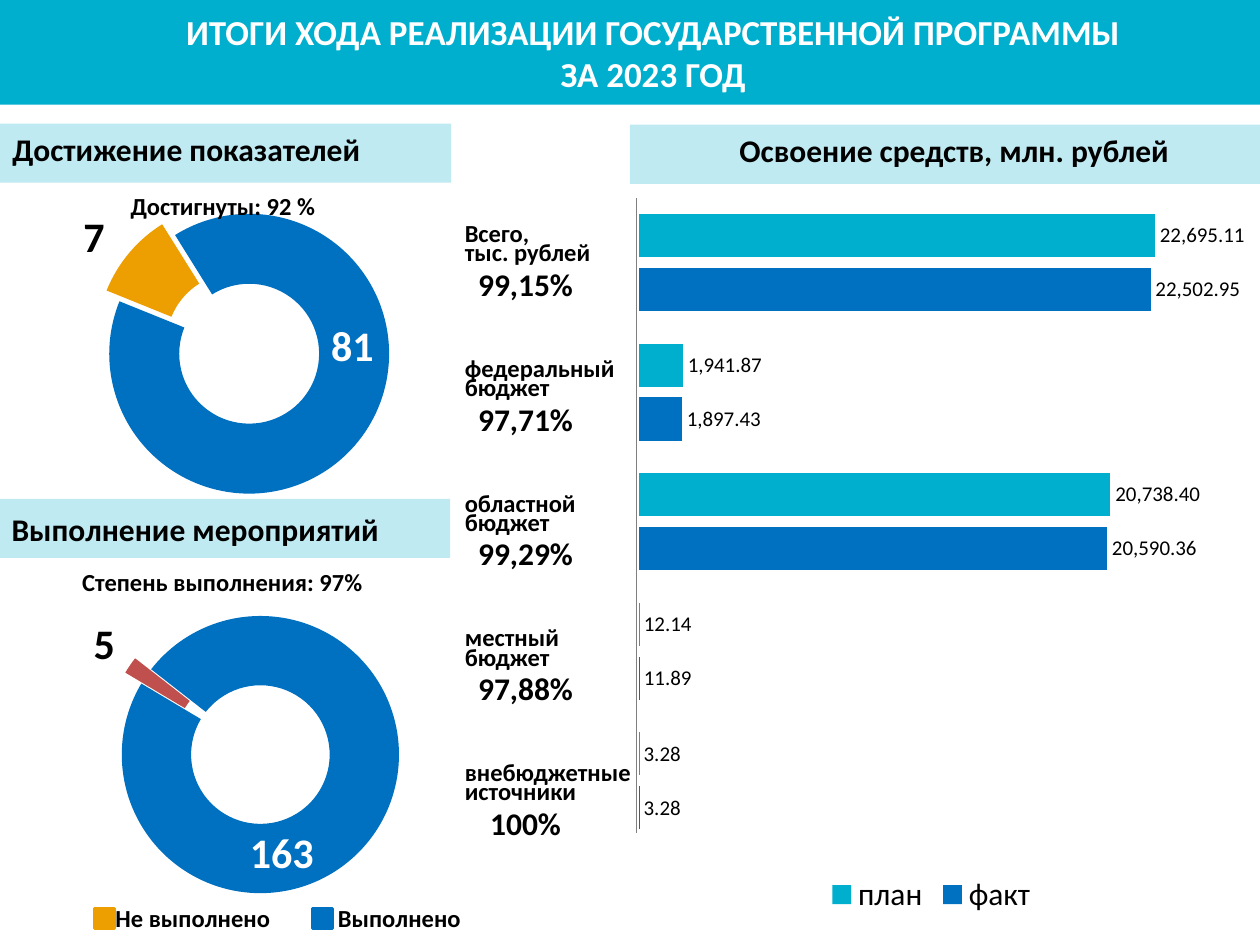
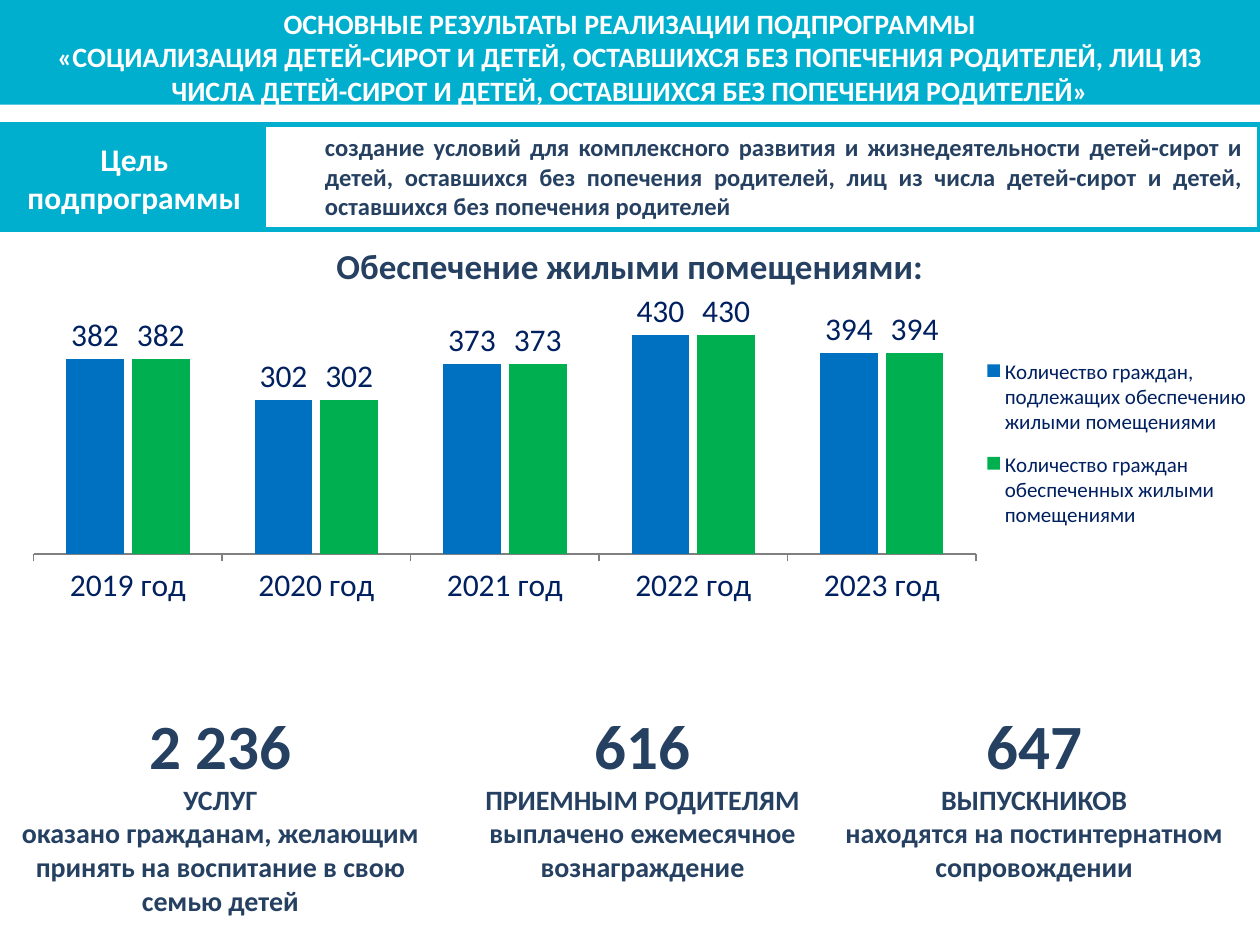
from dataclasses import dataclass

import pptx
import pptx.chart.data
import pptx.dml.color
import pptx.enum.chart
import pptx.enum.shapes
import pptx.enum.text
import pptx.oxml
import pptx.oxml.ns
import pptx.util
from lxml import etree

Pt = pptx.util.Pt
qn = pptx.oxml.ns.qn
ALIGN = pptx.enum.text.PP_ALIGN
ANCHOR = pptx.enum.text.MSO_ANCHOR
CHART = pptx.enum.chart.XL_CHART_TYPE
LEGEND = pptx.enum.chart.XL_LEGEND_POSITION


@dataclass(frozen=True)
class Theme:
    font: str = "Calibri"
    teal: str = "00AECD"
    blue: str = "0070C0"
    green: str = "00B050"
    amber: str = "ED9E01"
    red: str = "C0504D"
    navy: str = "254061"
    chart_navy: str = "002060"
    gray: str = "808080"
    black: str = "000000"
    white: str = "FFFFFF"
    small: int = 12
    caption: int = 14
    body: int = 16
    heading: int = 18
    title: int = 20
    callout: int = 24
    figure: int = 36


THEME = Theme()
SLIDE_WIDTH, SLIDE_HEIGHT = 720, 540


# Shared helpers
def rgb(value):
    return pptx.dml.color.RGBColor.from_string(value)


def points(box):
    return [Pt(round(length, 2)) for length in box]


def set_font(font, size, color, bold=False):
    font.name, font.size, font.bold = THEME.font, Pt(size), bold
    font.color.rgb = rgb(color)


def write_text(frame, text, size=THEME.caption, color=THEME.black, bold=True,
               align=ALIGN.CENTER, anchor=ANCHOR.TOP, wrap=True, line_spacing=None):
    """Fill a frame; each item is a string or a (string, size) pair."""
    frame.auto_size = pptx.enum.text.MSO_AUTO_SIZE.NONE
    frame.word_wrap, frame.vertical_anchor = wrap, anchor
    for index, item in enumerate([text] if isinstance(text, str) else text):
        words, item_size = (item, size) if isinstance(item, str) else item
        paragraph = frame.paragraphs[0] if index == 0 else frame.add_paragraph()
        paragraph.alignment = align
        if line_spacing:
            paragraph.line_spacing = Pt(line_spacing)
        run = paragraph.add_run()
        run.text = words
        set_font(run.font, item_size, color, bold)


def add_text(slide, box, text, **text_format):
    frame = slide.shapes.add_textbox(*points(box)).text_frame
    write_text(frame, text, **text_format)
    return frame


def add_rectangle(slide, box, fill=None, line=None, line_width=0, opacity=None):
    shape = slide.shapes.add_shape(pptx.enum.shapes.MSO_SHAPE.RECTANGLE, *points(box))
    shape.shadow.inherit = False
    if fill:
        shape.fill.solid()
        shape.fill.fore_color.rgb = rgb(fill)
    else:
        shape.fill.background()
    if opacity:
        color = shape.element.spPr.find(".//" + qn("a:srgbClr"))
        etree.SubElement(color, qn("a:alpha")).set("val", str(opacity * 1000))
    if line:
        shape.line.color.rgb = rgb(line)
        shape.line.width = Pt(line_width)
    else:
        shape.line.fill.background()
    return shape


def add_title_band(slide, text, left, width, size, anchor):
    title = slide.shapes.title
    title.left, title.top, title.width, title.height = points((left, 0, width, 60.5))
    write_text(title.text_frame, text, size=size, color=THEME.white, anchor=anchor)
    band = add_rectangle(slide, (0, 0, SLIDE_WIDTH, 59.8), THEME.teal)
    title.element.addprevious(band.element)


def add_section_heading(slide, box, text, label_left=0, label_top=0, label_width=220):
    left, top = box[:2]
    add_rectangle(slide, box, THEME.teal, opacity=25)
    add_text(slide, (left + label_left, top + label_top, label_width, 29), text,
             size=THEME.heading, align=ALIGN.LEFT, wrap=False)


# Chart helpers
def add_chart(slide, box, kind, categories, series):
    data = pptx.chart.data.CategoryChartData()
    data.categories = categories
    for name, values in series:
        data.add_series(name, values)
    chart = slide.shapes.add_chart(kind, *points(box), data).chart
    set_font(chart.font, THEME.heading, THEME.black)
    chart.has_title = chart.has_legend = False
    return chart


def set_layout(chart, part, position, inner=False):
    """Place the plot area or legend by fractions of the chart."""
    parent = chart.element.find(".//" + qn(part))
    for layout in parent.findall(qn("c:layout")):
        parent.remove(layout)
    layout = etree.Element(qn("c:layout"))
    manual = etree.SubElement(layout, qn("c:manualLayout"))
    settings = [("layoutTarget", "inner")] if inner else []
    settings += [("xMode", "edge"), ("yMode", "edge"), *zip("xywh", position)]
    for name, value in settings:
        etree.SubElement(manual, qn("c:" + name)).set("val", str(value))
    parent.insert(0 if inner else 1, layout)


def style_bars(chart, colors, gap, overlap, maximum, label_size, label_color,
               number_format, legend_position, legend_size):
    plot = chart.plots[0]
    plot.vary_by_categories = False
    plot.gap_width, plot.overlap = gap, overlap
    axis = chart.value_axis
    axis.minimum_scale, axis.maximum_scale = 0, maximum
    axis.has_major_gridlines = axis.visible = False
    for series, color in zip(plot.series, colors):
        series.format.fill.solid()
        series.format.fill.fore_color.rgb = rgb(color)
        series.invert_if_negative = False
        labels = series.data_labels
        labels.show_value = True
        labels.position = pptx.enum.chart.XL_LABEL_POSITION.OUTSIDE_END
        labels.number_format, labels.number_format_is_linked = number_format, False
        set_font(labels.font, label_size, label_color)
    chart.has_legend = True
    chart.legend.position = legend_position
    chart.legend.include_in_layout = False
    set_font(chart.legend.font, legend_size, label_color)


# Slide 1 regions
def add_ring_panel(slide, left, top, heading, label_top, caption, caption_left,
                   caption_width, ring_offset, values, colors, start, explosion, callouts):
    add_section_heading(slide, (left, top, 257.8, 33.8), heading, label_top=label_top)
    ring_left, ring_top = ring_offset
    chart = add_chart(slide, (left + ring_left, top + ring_top, 317.5, 189.4),
                      CHART.DOUGHNUT, ["1", "2"], [("Series 1", values)])
    series = chart.plots[0].series[0]
    series.format.line.fill.background()
    exploded = etree.Element(qn("c:explosion"))
    exploded.set("val", str(explosion))
    series.format.line  # the series properties precede the explosion element
    chart.element.find(".//" + qn("c:ser")).find(qn("c:spPr")).addnext(exploded)
    for index, color in enumerate(colors):
        fill = series.points[index].format.fill
        fill.solid()
        fill.fore_color.rgb = rgb(color)
    chart.element.find(".//" + qn("c:firstSliceAng")).set("val", str(start))
    add_text(slide, (left + caption_left, top + 35.2, caption_width, 24), caption)
    for text, color, callout_left, callout_top in callouts:
        add_text(slide, (left + callout_left, top + callout_top, 57, 39.6), text,
                 size=THEME.callout, color=color)


def add_ring_legend(slide, left, top, entries):
    for text, color, swatch_left, label_left in entries:
        add_rectangle(slide, (left + swatch_left, top + 6.5, 11.5, 11.5), color, color, 2)
        add_text(slide, (left + label_left, top, 158.4, 24), text)


def add_spending_panel(slide, left, top):
    chart = add_chart(slide, (left + 96.5, top + 29, 357, 425.5), CHART.BAR_CLUSTERED,
                      ["1", "2", "3", "4", "5"],
                      [("факт", (3.28, 11.89, 20590.36, 1897.43, 22502.95)),
                       ("план", (3.28, 12.14, 20738.4, 1941.87, 22695.11))])
    style_bars(chart, (THEME.blue, THEME.teal), 75, -25, 26000, THEME.small, THEME.black,
               "#,##0.00", LEGEND.BOTTOM, THEME.heading)
    chart.category_axis.visible = False
    set_layout(chart, "c:plotArea", (0.03, 0.03, 0.95, 0.87), inner=True)

    # Budget names and execution rates share one row pitch
    line_height, row_pitch = 11, 77
    names = add_text(slide, (left + 0.7, top + 55.6, 110, 359),
                     ["Всего,", "тыс. рублей", "федеральный бюджет", "областной бюджет",
                      "местный бюджет", "внебюджетные источники"],
                     align=ALIGN.LEFT, line_spacing=line_height)
    for paragraph in names.paragraphs[2:]:
        paragraph.space_before = Pt(row_pitch - 2 * line_height)
    for row, rate in enumerate(("99,15%", "97,71%", "99,29%", "97,88%", "100%")):
        add_text(slide, (left, top + 76.5 + row * row_pitch, 85, 39.6), rate,
                 size=THEME.heading)

    add_section_heading(slide, (left + 102.2, top, 360, 33.8), "Освоение средств, млн. рублей",
                        label_left=55.4, label_width=262)
    axis_left = left + 105.8
    axis = slide.shapes.add_connector(pptx.enum.shapes.MSO_CONNECTOR.STRAIGHT,
                                      *points((axis_left, top + 42, axis_left, top + 404.8)))
    axis.line.color.rgb = rgb(THEME.gray)
    axis.line.width = Pt(0.75)
    etree.SubElement(axis.element.spPr, qn("a:effectLst"))


def build_progress_slide(slide):
    add_title_band(slide, "ИТОГИ ХОДА РЕАЛИЗАЦИИ ГОСУДАРСТВЕННОЙ ПРОГРАММЫ ЗА 2023 ГОД",
                   87.8, 571, THEME.title, ANCHOR.MIDDLE)
    add_ring_panel(slide, 0, 70.6, "Достижение показателей", 0, "Достигнуты: 92 %", 48.2, 158.4,
                   (-20, 33.8), (90, 10), (THEME.blue, THEME.amber), 328, 12,
                   [("81", THEME.white, 172.8, 108.7), ("7", THEME.black, 25.2, 46)])
    add_ring_panel(slide, -0.5, 285.1, "Выполнение мероприятий", 2.9,
                   "Степень выполнения: 97%", 25.7, 203.8,
                   (-14, 48.3), (98, 2), (THEME.blue, THEME.red), 308, 14,
                   [("163", THEME.white, 133, 183.6), ("5", THEME.black, 31.5, 64.1)])
    add_spending_panel(slide, 257.8, 71.3)
    add_ring_legend(slide, 31, 512.6, [("Не выполнено", THEME.amber, 23, 0),
                                       ("Выполнено", THEME.blue, 147.6, 118)])


# Slide 2 regions
def add_goal(slide, left, top, width, height):
    add_rectangle(slide, (left, top, 150.5, height), THEME.teal, THEME.teal, 3)
    add_text(slide, (left + 8, top + 5, 137.5, 51), ["Цель", "подпрограммы"],
             size=THEME.heading, color=THEME.white, wrap=False)
    add_text(slide, (left + 178.6, top + 0.7, 538.5, 58.3),
             "создание условий для комплексного развития и жизнедеятельности детей-сирот и "
             "детей, оставшихся без попечения родителей, лиц из числа детей-сирот и детей, "
             "оставшихся без попечения родителей", color=THEME.navy, align=ALIGN.JUSTIFY)
    add_rectangle(slide, (left, top, width, height), line=THEME.teal, line_width=3)


def add_housing(slide, left, top, width):
    add_text(slide, (left, top, width, 31.7), "Обеспечение жилыми помещениями:",
             size=THEME.title, color=THEME.navy)
    citizens = (382, 302, 373, 430, 394)
    chart = add_chart(slide, (left + 8.6, top + 26, width - 8.6, 187.2),
                      CHART.COLUMN_CLUSTERED, [f"{year} год" for year in range(2019, 2024)],
                      [("Количество граждан, подлежащих обеспечению жилыми помещениями", citizens),
                       ("Количество граждан обеспеченных жилыми помещениями", citizens)])
    style_bars(chart, (THEME.blue, THEME.green), 113, -14, 500, THEME.heading,
               THEME.chart_navy, "General", LEGEND.RIGHT, THEME.small)
    axis = chart.category_axis
    axis.major_tick_mark = pptx.enum.chart.XL_TICK_MARK.OUTSIDE
    axis.format.line.color.rgb = rgb(THEME.gray)
    set_font(axis.tick_labels.font, THEME.heading, THEME.chart_navy)
    set_layout(chart, "c:plotArea", (0.015, 0.048, 0.757, 0.778), inner=True)
    set_layout(chart, "c:legend", (0.77, 0.18, 0.23, 0.62))


def add_results(slide, top, results):
    for left, figure, group, result in results:
        add_text(slide, (left, top, 252, 128), [(figure, THEME.figure), group, result],
                 size=THEME.body, color=THEME.navy)


def build_subprogram_slide(slide):
    add_title_band(slide, ["ОСНОВНЫЕ РЕЗУЛЬТАТЫ РЕАЛИЗАЦИИ ПОДПРОГРАММЫ",
                           "«СОЦИАЛИЗАЦИЯ ДЕТЕЙ-СИРОТ И ДЕТЕЙ, ОСТАВШИХСЯ БЕЗ ПОПЕЧЕНИЯ "
                           "РОДИТЕЛЕЙ, ЛИЦ ИЗ ЧИСЛА ДЕТЕЙ-СИРОТ И ДЕТЕЙ, ОСТАВШИХСЯ БЕЗ "
                           "ПОПЕЧЕНИЯ РОДИТЕЛЕЙ»"],
                   0, SLIDE_WIDTH, THEME.body, ANCHOR.TOP)
    add_goal(slide, 0, 71.3, SLIDE_WIDTH, 59.8)
    add_housing(slide, 0, 136, SLIDE_WIDTH)
    add_results(slide, 400.3, [
        (0, "2 236", "УСЛУГ",
         "оказано гражданам, желающим принять на воспитание в свою семью детей"),
        (241.2, "616", "ПРИЕМНЫМ РОДИТЕЛЯМ", "выплачено ежемесячное вознаграждение"),
        (465, "647", "ВЫПУСКНИКОВ", "находятся на постинтернатном сопровождении")])


def main():
    presentation = pptx.Presentation()
    presentation.slide_width, presentation.slide_height = Pt(SLIDE_WIDTH), Pt(SLIDE_HEIGHT)
    title_only = presentation.slide_layouts[5]
    for build_slide in (build_progress_slide, build_subprogram_slide):
        build_slide(presentation.slides.add_slide(title_only))
    presentation.save("out.pptx")


if __name__ == "__main__":
    main()
